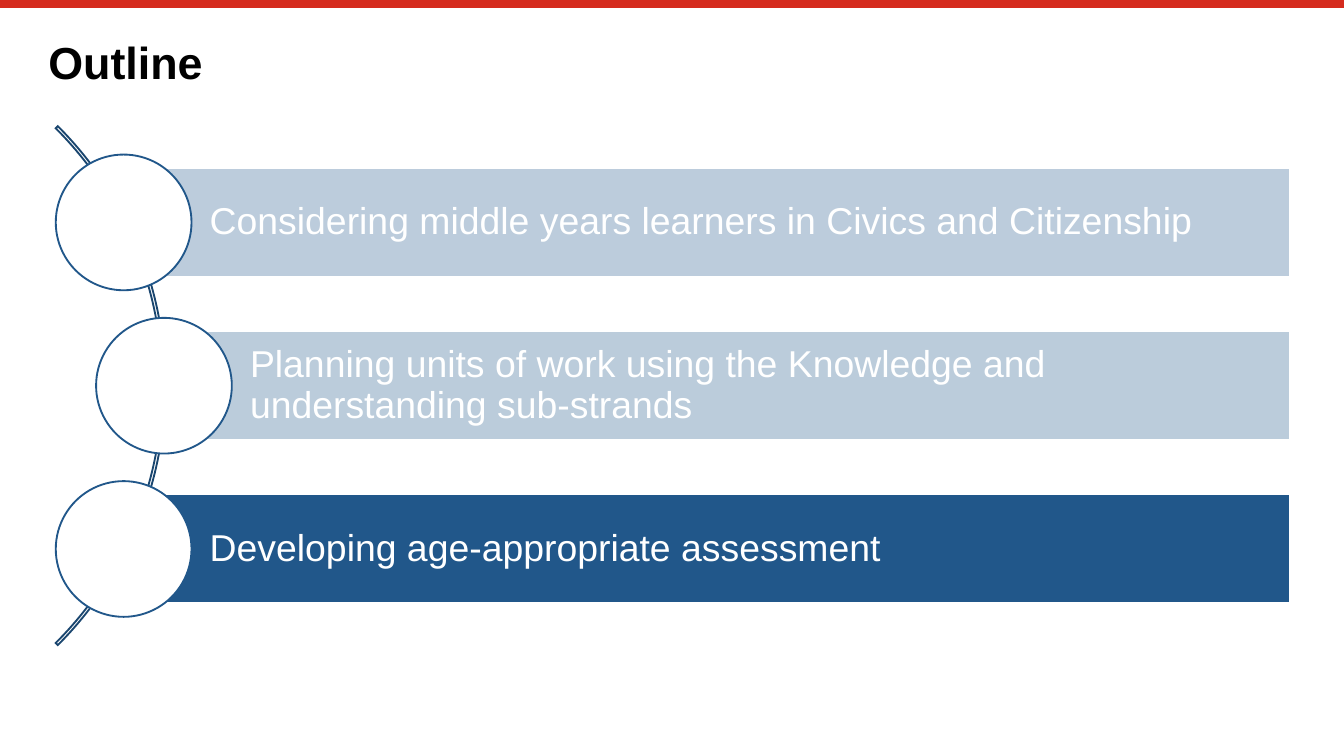
"""Build an outline slide with three agenda bars along a curved arc."""
import pptx
import pptx.util
import pptx.dml.color
import pptx.enum.shapes
import pptx.enum.text
import pptx.oxml
import pptx.oxml.ns

Inches, Pt = pptx.util.Inches, pptx.util.Pt
SHAPE = pptx.enum.shapes.MSO_SHAPE
ANCHOR = pptx.enum.text.MSO_ANCHOR
LEFT = pptx.enum.text.PP_ALIGN.LEFT

COLORS = {"red": "D52B1E", "black": "000000", "white": "FFFFFF",
          "blue": "21578A", "pale": "BCCCDC", "arc": "1A466F"}
TITLE = "Outline"
ITEMS = [
    {"text": "Considering middle years learners in Civics and Citizenship",
     "left": 0.92, "fill": "pale", "opacity": 100},
    {"text": "Planning units of work using the Knowledge and understanding sub-strands",
     "left": 1.22, "fill": "blue", "opacity": 30},
    {"text": "Developing age-appropriate assessment",
     "left": 0.92, "fill": "blue", "opacity": 100},
]
SLIDE_WIDTH = 10
SLIDE_HEIGHT = SLIDE_WIDTH * 9 / 16
FIRST_TOP, LAST_TOP, BAR_HEIGHT, BAR_RIGHT = 1.25, 3.68, 0.81, 9.6
BAR_PITCH = (LAST_TOP - FIRST_TOP) / (len(ITEMS) - 1)
CIRCLE = 1.01


def rgb(name):
    return pptx.dml.color.RGBColor.from_string(COLORS[name])


def add_xml(parent, tag, attributes=""):
    parent.append(pptx.oxml.parse_xml(
        f'<a:{tag} {pptx.oxml.ns.nsdecls("a")} {attributes}/>'))


def add_shape(s, kind, box, fill, line):
    sp = s.shapes.add_shape(kind, *map(Inches, box))
    sp.shadow.inherit = False
    if fill:
        sp.fill.solid()
        sp.fill.fore_color.rgb = rgb(fill)
    else:
        sp.fill.background()
    sp.line.color.rgb = rgb(line)
    sp.line.width = Pt(1)
    add_xml(sp.line._get_or_add_ln(), "miter", 'lim="800000"')
    return sp


def set_text(sp, text, size, color, insets, anchor, bold=False):
    tf = sp.text_frame
    tf.word_wrap = True
    tf.auto_size = pptx.enum.text.MSO_AUTO_SIZE.NONE
    tf.vertical_anchor = anchor
    tf.margin_left, tf.margin_top, tf.margin_right, tf.margin_bottom = map(Inches, insets)
    p = tf.paragraphs[0]
    p.alignment = LEFT
    p.line_spacing = 0.9
    r = p.add_run()
    r.text = text
    r.font.name = "Arial"
    r.font.size = Pt(size)
    r.font.bold = bold
    r.font.color.rgb = rgb(color)


def add_item(s, index, item):
    left, top = item["left"], FIRST_TOP + index * BAR_PITCH
    bar = add_shape(s, SHAPE.RECTANGLE, (left, top, BAR_RIGHT - left, BAR_HEIGHT),
                    item["fill"], "white")
    if item["opacity"] < 100:
        color = bar._element.spPr.find(".//" + pptx.oxml.ns.qn("a:srgbClr"))
        add_xml(color, "alpha", f'val="{item["opacity"] * 1000}"')
    set_text(bar, item["text"], 20, "white", (0.64, 0.06, 0.06, 0.06), ANCHOR.MIDDLE)
    add_shape(s, SHAPE.OVAL,
              (left - CIRCLE / 2, top + (BAR_HEIGHT - CIRCLE) / 2, CIRCLE, CIRCLE),
              "white", "blue")


def main():
    prs = pptx.Presentation()
    prs.slide_width, prs.slide_height = Inches(SLIDE_WIDTH), Inches(SLIDE_HEIGHT)
    s = prs.slides.add_slide(prs.slide_layouts[5])

    rule = s.shapes.add_connector(pptx.enum.shapes.MSO_CONNECTOR.STRAIGHT,
                                  0, Inches(0.03), Inches(SLIDE_WIDTH), Inches(0.03))
    rule.line.color.rgb = rgb("red")
    rule.line.width = Pt(4.2)
    add_xml(rule._element.spPr, "effectLst")

    title = s.shapes.title
    title.left, title.top, title.width, title.height = map(Inches, (0.36, 0.3, 9.29, 0.39))
    set_text(title, TITLE, 24, "black", (0, 0, 0, 0), ANCHOR.TOP, bold=True)

    arc = add_shape(s, SHAPE.BLOCK_ARC, (-4.23, 0.14, 5.46, 5.46), None, "arc")
    for i, value in enumerate((189, 27, 0.004)):
        arc.adjustments[i] = value

    for index, item in enumerate(ITEMS):
        add_item(s, index, item)
    prs.save("out.pptx")


if __name__ == "__main__":
    main()
